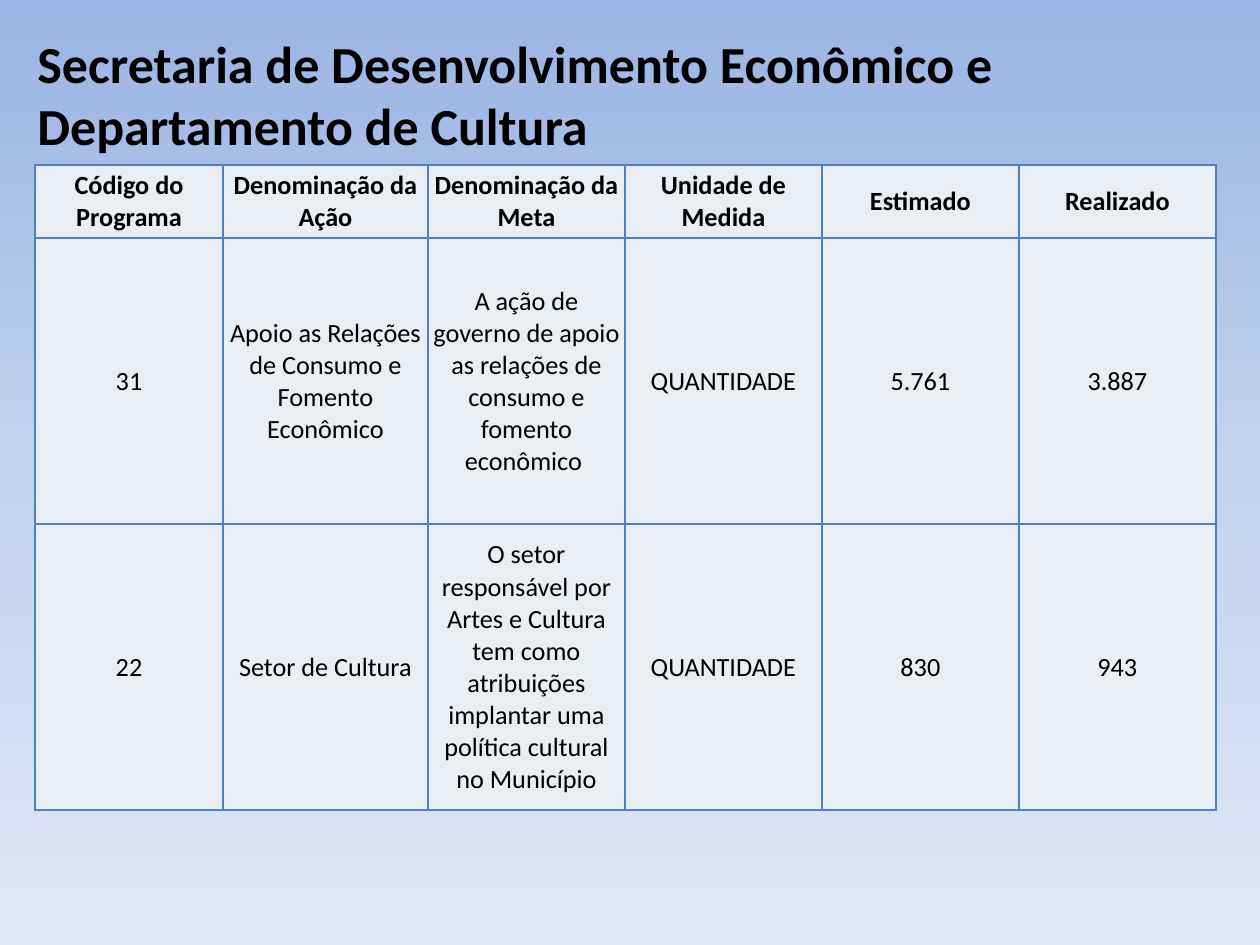
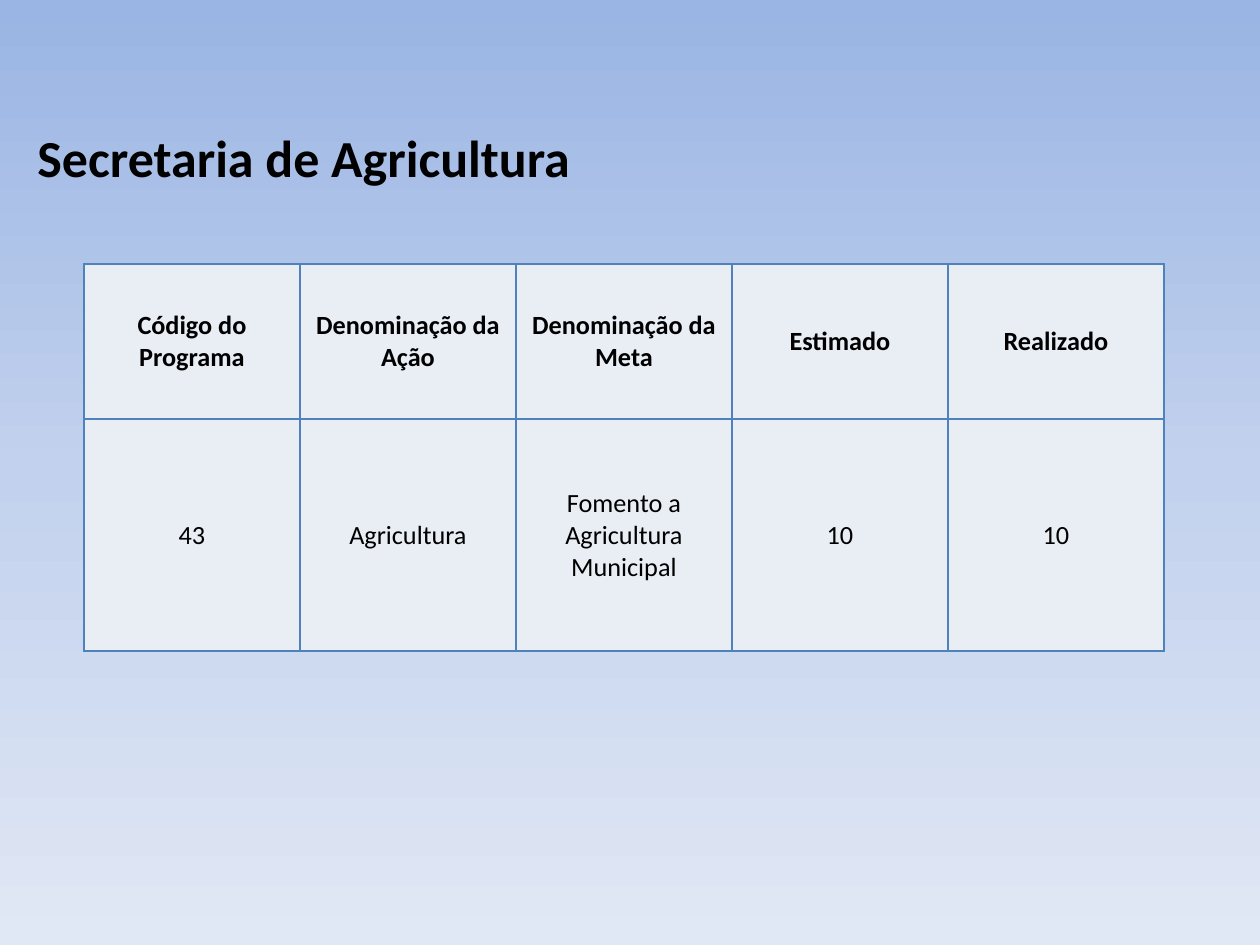
from copy import deepcopy

from lxml.etree import SubElement
from pptx import Presentation
from pptx.dml.color import RGBColor
from pptx.enum.text import MSO_ANCHOR as Anchor, PP_ALIGN as Align
from pptx.oxml.ns import qn
from pptx.util import Emu, Pt

PX_PER_INCH = 126
SLIDE_WIDTH, SLIDE_HEIGHT = 1260, 945
TITLE_LEFT, TITLE_WIDTH, TITLE_LINE = 25, 1071, 63
FONT = "Calibri"
TITLE_SIZE, CELL_SIZE = Pt(29.7), Pt(15)
BLACK = RGBColor(0x00, 0x00, 0x00)
CELL_FILL = RGBColor(0xE9, 0xED, 0xF4)
BORDER = RGBColor(0x4F, 0x81, 0xBD)
SKY = (
    RGBColor(0x9A, 0xB5, 0xE4),
    RGBColor(0xC2, 0xD1, 0xED),
    RGBColor(0xE1, 0xE8, 0xF5),
)

ECONOMY_ROWS = [
    ["Código do Programa", "Denominação da Ação", "Denominação da Meta",
     "Unidade de Medida", "Estimado", "Realizado"],
    ["31", "Apoio as Relações de Consumo e Fomento Econômico",
     "A ação de governo de apoio as relações de consumo e fomento econômico ",
     "QUANTIDADE", "5.761", "3.887"],
    ["22", "Setor de Cultura",
     "O setor responsável por Artes e Cultura tem como atribuições "
     "implantar uma política cultural no Município",
     "QUANTIDADE", "830", "943"],
]
AGRICULTURE_ROWS = [
    ["Código do Programa", "Denominação da Ação", "Denominação da Meta",
     "Estimado", "Realizado"],
    ["43", "Agricultura", "Fomento a Agricultura Municipal", "10", "10"],
]


def px(length):
    return Emu(round(length * 914400 / PX_PER_INCH))


def paint_background(master):
    fill = master.background.fill
    fill.gradient()
    fill.gradient_angle = 270
    stop_list = master.element.find(".//" + qn("a:gsLst"))
    stop_list.insert(1, deepcopy(stop_list[0]))
    for index, (stop, color) in enumerate(zip(fill.gradient_stops, SKY)):
        stop.position = index / (len(SKY) - 1)
        stop.color.rgb = color


def style_paragraph(paragraph, size, bold, alignment):
    paragraph.alignment = alignment
    font = paragraph.font
    font.name, font.size, font.bold = FONT, size, bold
    font.color.rgb = BLACK


def add_title(slide, text, top, lines):
    box = slide.shapes.add_textbox(
        px(TITLE_LEFT), px(top), px(TITLE_WIDTH), px(lines * TITLE_LINE))
    frame = box.text_frame
    frame.word_wrap = True
    frame.vertical_anchor = Anchor.MIDDLE
    frame.margin_top = frame.margin_bottom = 0
    frame.text = text
    style_paragraph(frame.paragraphs[0], TITLE_SIZE, True, Align.LEFT)


def outline_cell(cell):
    properties = cell._tc.get_or_add_tcPr()
    for side in ("a:lnL", "a:lnR", "a:lnT", "a:lnB"):
        line = SubElement(properties, qn(side), w=str(Pt(1)))
        solid = SubElement(line, qn("a:solidFill"))
        SubElement(solid, qn("a:srgbClr"), val=str(BORDER))


def fill_cell(cell, text, bold):
    outline_cell(cell)
    cell.fill.solid()
    cell.fill.fore_color.rgb = CELL_FILL
    cell.vertical_anchor = Anchor.MIDDLE
    cell.margin_left = cell.margin_right = cell.margin_top = px(1)
    cell.margin_bottom = 0
    cell.text = text
    style_paragraph(cell.text_frame.paragraphs[0], CELL_SIZE, bold, Align.CENTER)


def add_goal_table(slide, left, top, widths, heights, rows):
    table = slide.shapes.add_table(
        len(rows), len(widths), px(left), px(top),
        px(sum(widths)), px(sum(heights))).table
    table.first_row = table.horz_banding = False
    for column, width in zip(table.columns, widths):
        column.width = px(width)
    for row_index, (row, height) in enumerate(zip(rows, heights)):
        table.rows[row_index].height = px(height)
        for column_index, text in enumerate(row):
            fill_cell(table.cell(row_index, column_index), text, row_index == 0)


def main():
    presentation = Presentation()
    presentation.slide_width = px(SLIDE_WIDTH)
    presentation.slide_height = px(SLIDE_HEIGHT)
    paint_background(presentation.slide_master)
    blank = presentation.slide_layouts[6]

    economy = presentation.slides.add_slide(blank)
    add_title(economy, "Secretaria de Desenvolvimento Econômico e "
              "Departamento de Cultura", 31, 2)
    add_goal_table(economy, 35, 165, [188, 205] + [197] * 4,
                   [73, 286, 286], ECONOMY_ROWS)

    agriculture = presentation.slides.add_slide(blank)
    add_title(agriculture, "Secretaria de Agricultura", 125, 1)
    add_goal_table(agriculture, 84, 264, [216] * 5, [155, 232], AGRICULTURE_ROWS)

    presentation.save("out.pptx")


if __name__ == "__main__":
    main()
